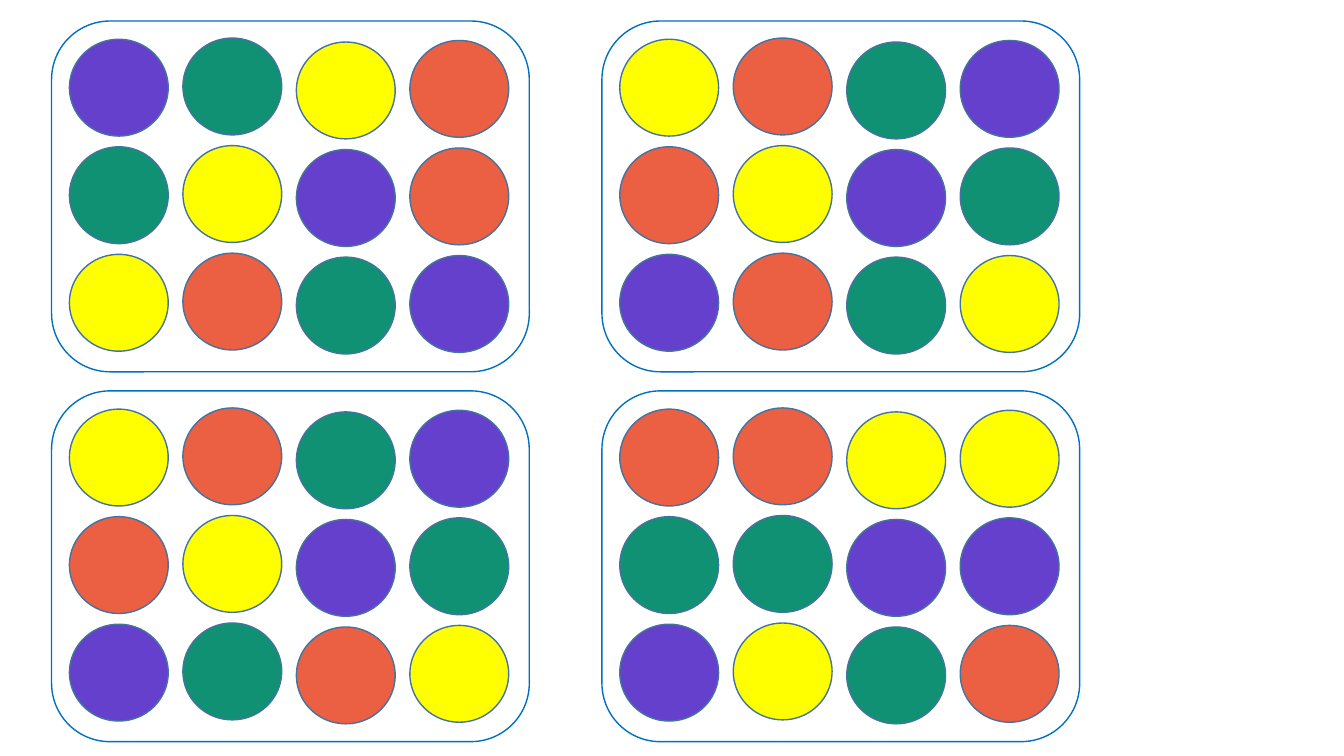
from dataclasses import dataclass

from pptx import Presentation
from pptx.dml.color import RGBColor
from pptx.enum import shapes as kinds
from pptx.util import Cm, Pt

# Content: (card column, card row) and its dots, row by row
# P purple, G green, Y yellow, R red
CARDS = [
    ((0, 0), ["PGYR", "GYPR", "YRGP"]),
    ((0, 1), ["YRGP", "RYPG", "PGRY"]),
    ((1, 1), ["RRYY", "GGPP", "PYGR"]),
    ((1, 0), ["YRGP", "RYPG", "PRGY"]),
]


@dataclass(frozen=True)
class Theme:
    purple: str = "6540CC"
    green: str = "119173"
    yellow: str = "FFFF00"
    red: str = "EB5F43"
    dot_line: str = "43739E"
    card_line: str = "0070C0"
    line_width: float = 1


THEME = Theme()
DOT_FILLS = {"P": THEME.purple, "G": THEME.green, "Y": THEME.yellow, "R": THEME.red}

# Layout in centimetres
CARD_LEFT, CARD_TOP = 1.3, 0.53
CARD_WIDTH, CARD_HEIGHT = 12.04, 8.84
CARD_STEP_X, CARD_STEP_Y = 13.87, 9.32
DOT_WIDTH, DOT_HEIGHT = 2.49, 2.44
DOT_INSET = 0.45
DOT_STEP_X, DOT_STEP_Y = 2.86, 2.71
COLUMN_DROPS = [0.46, 0.43, 0.53, 0.49]


def add_outline(group, kind, left, top, width, height, line, fill=None):
    shape = group.shapes.add_shape(kind, Cm(left), Cm(top), Cm(width), Cm(height))
    shape.shadow.inherit = False
    if fill:
        shape.fill.solid()
        shape.fill.fore_color.rgb = RGBColor.from_string(fill)
    else:
        shape.fill.background()
    shape.line.color.rgb = RGBColor.from_string(line)
    shape.line.width = Pt(THEME.line_width)


def add_card(slide, place, dot_rows):
    card = slide.shapes.add_group_shape()
    left = CARD_LEFT + place[0] * CARD_STEP_X
    top = CARD_TOP + place[1] * CARD_STEP_Y

    # Dots
    for row, letters in enumerate(dot_rows):
        for column, letter in enumerate(letters):
            add_outline(card, kinds.MSO_SHAPE.OVAL,
                        left + DOT_INSET + column * DOT_STEP_X,
                        top + COLUMN_DROPS[column] + row * DOT_STEP_Y,
                        DOT_WIDTH, DOT_HEIGHT, THEME.dot_line, DOT_FILLS[letter])

    # Rounded frame
    add_outline(card, kinds.MSO_SHAPE.ROUNDED_RECTANGLE,
                left, top, CARD_WIDTH, CARD_HEIGHT, THEME.card_line)


def main():
    deck = Presentation()
    deck.slide_width, deck.slide_height = Cm(33.87), Cm(19.05)
    slide = deck.slides.add_slide(deck.slide_layouts[6])
    for place, dot_rows in CARDS:
        add_card(slide, place, dot_rows)
    deck.save("out.pptx")


if __name__ == "__main__":
    main()
